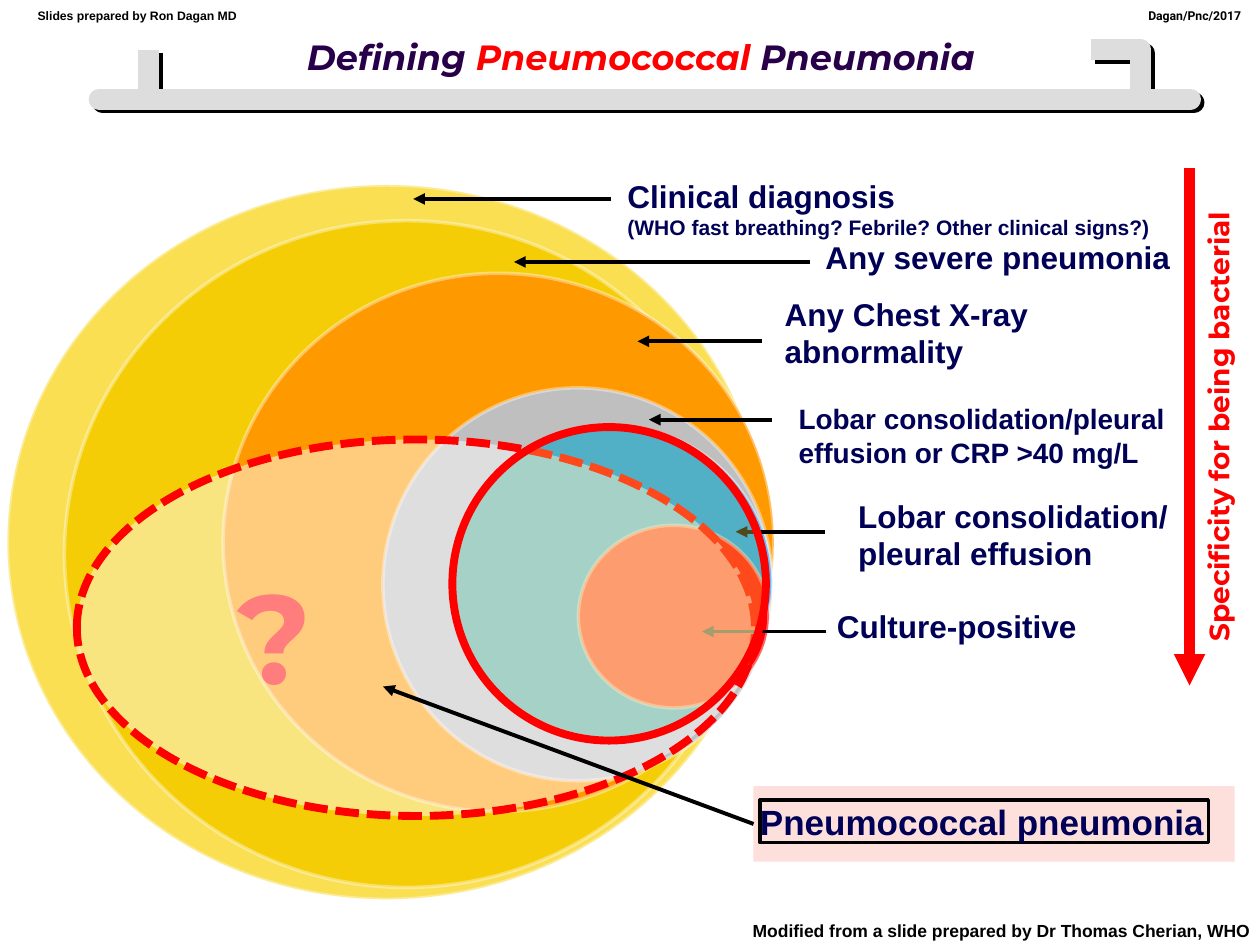
from lxml import etree
from pptx import Presentation
from pptx.dml.color import RGBColor
from pptx.enum.dml import MSO_LINE
from pptx.enum.shapes import MSO_CONNECTOR, MSO_SHAPE
from pptx.enum.text import MSO_ANCHOR, PP_ALIGN
from pptx.oxml.ns import qn
from pptx.util import Cm, Pt

OVAL, RECT = MSO_SHAPE.OVAL, MSO_SHAPE.RECTANGLE
STRAIGHT = MSO_CONNECTOR.STRAIGHT
DASH = MSO_LINE.SQUARE_DOT
LEFT, MID, RIGHT = PP_ALIGN.LEFT, PP_ALIGN.CENTER, PP_ALIGN.RIGHT
TOP, CENTER = MSO_ANCHOR.TOP, MSO_ANCHOR.MIDDLE

HEX = {
    "white": "FFFFFF", "black": "000000", "red": "FF0000", "navy": "000056",
    "plum": "280049", "lemon": "FBDF53", "gold": "F5CD06",
    "orange": "FF9900", "gray": "BFBFBF", "blue": "0099FF",
    "pink": "FDE0DB", "silver": "DDDDDD",
}


def rgb(name):
    return RGBColor.from_string(HEX[name])


def fade(fill, alpha):
    """Set the opacity, in percent, of a solid fill element."""
    etree.SubElement(fill[0], qn("a:alpha"), val=str(alpha * 1000))


def bezier(start, curves, steps=40):
    """Return points along a chain of cubic curves."""
    points = []
    for a, b, end in curves:
        for i in range(1, steps + 1):
            t = i / steps
            u = 1 - t
            points.append(tuple(
                u**3 * p + 3 * u * u * t * q + 3 * u * t * t * r + t**3 * s
                for p, q, r, s in zip(start, a, b, end)))
        start = end
    return points


class Canvas:
    """Holds the text style and the current slide."""
    font = "Arial"
    ink = "navy"

    def __init__(self, slide):
        self.shapes = slide.shapes

    def shape(self, kind, place, fill=None, alpha=None, line=None, width=2,
              line_alpha=None, dash=None):
        item = self.shapes.add_shape(kind, *map(Cm, place))
        item.shadow.inherit = False
        if fill:
            item.fill.solid()
            item.fill.fore_color.rgb = rgb(fill)
            if alpha:
                fade(item._element.spPr.find(qn("a:solidFill")), alpha)
        else:
            item.fill.background()
        if line:
            item.line.color.rgb = rgb(line)
            item.line.width = Pt(width)
            if line_alpha:
                outline = item._element.spPr.find(qn("a:ln"))
                fade(outline.find(qn("a:solidFill")), line_alpha)
            if dash:
                item.line.dash_style = dash
        else:
            item.line.fill.background()
        return item

    def put(self, item, lines, align=LEFT, anchor=TOP, inset=(0, 0),
            wrap=False, font=None, italic=False):
        """Fill a shape; each line is a list of (text, size, colour) runs."""
        frame = item.text_frame
        frame.word_wrap = wrap
        frame.vertical_anchor = anchor
        frame.margin_left = frame.margin_right = Cm(inset[0])
        frame.margin_top = frame.margin_bottom = Cm(inset[1])
        for i, runs in enumerate(lines):
            para = frame.add_paragraph() if i else frame.paragraphs[0]
            para.alignment = align
            for text, size, color in runs:
                run = para.add_run()
                run.text = text
                run.font.name = font or self.font
                run.font.size = Pt(size)
                run.font.bold = True
                run.font.italic = italic
                run.font.color.rgb = rgb(color)

    def text(self, place, runs, turn=0, **style):
        box = self.shapes.add_textbox(*map(Cm, place))
        box.rotation = turn
        self.put(box, [runs], **style)

    def label(self, place, rows, fill="white", line=None):
        box = self.shape(RECT, place, fill, line=line)
        self.put(box, [[(text, size, self.ink)] for text, size in rows])

    def arrow(self, start, end, color="black", width=2.25):
        item = self.shapes.add_connector(STRAIGHT, *map(Cm, start + end))
        item.line.color.rgb = rgb(color)
        item.line.width = Pt(width)
        props = item._element.spPr
        etree.SubElement(props.find(qn("a:ln")), qn("a:tailEnd"),
                         type="triangle")
        etree.SubElement(props, qn("a:effectLst"))
        return item

    def swoosh(self, start, curves, color, width):
        """Draw an open curve with a hard black shadow."""
        pen = self.shapes.build_freeform(*start, scale=Cm(1))
        pen.add_line_segments(bezier(start, curves), close=False)
        item = pen.convert_to_shape()
        item.fill.background()
        item.line.color.rgb = rgb(color)
        item.line.width = Pt(width)
        item.shadow.inherit = False
        effects = item._element.spPr.find(qn("a:effectLst"))
        shade = etree.SubElement(effects, qn("a:outerShdw"),
                                 dist=str(int(Pt(2.8))), dir="2700000")
        etree.SubElement(shade, qn("a:srgbClr"), val=HEX["black"])


CIRCLES = [
    ("lemon", (0.15, 3.73, 15.29, 14.4)),
    ("gold", (1.3, 4.45, 13.79, 13.44)),
    ("orange", (4.5, 5.51, 11.1, 10.85)),
    ("gray", (7.72, 7.82, 7.85, 7.92)),
    ("blue", (9.12, 8.59, 6.43, 6.3)),
    ("red", (11.66, 10.59, 3.84, 3.68)),
]

# place of the label, its rows, then the arrow's start, end and height
LABELS = [
    ((16.64, 4.8, 7.01, 0.76), [("Any severe pneumonia", 18)],
     (16.33, 10.36, 5.28)),
    ((15.82, 5.94, 6.15, 1.9), [("Any Chest X-ray", 18), ("abnormality", 18)],
     (15.37, 12.85, 6.88)),
    ((16.1, 8.1, 7.47, 1.37),
     [("Lobar consolidation/pleural", 16), ("effusion or CRP >40 mg/L", 16)],
     (15.57, 13.08, 8.46)),
    ((17.3, 10.01, 7.7, 1.93),
     [("Lobar consolidation/", 18), ("pleural effusion", 18)],
     (16.64, 14.83, 10.72)),
    ((16.87, 12.24, 4.88, 0.76), [("Culture-positive", 18)],
     (16.66, 14.15, 12.73)),
    ((12.65, 3.56, 10.67, 1.3),
     [("Clinical diagnosis", 18),
      ("(WHO fast breathing? Febrile? Other clinical signs?)", 12)],
     (12.32, 8.33, 4.01)),
]


def main():
    deck = Presentation()
    deck.slide_width, deck.slide_height = Cm(25.4), Cm(19.05)
    art = Canvas(deck.slides.add_slide(deck.slide_layouts[6]))
    pad = {"inset": (0.25, 0.13), "wrap": True}

    art.swoosh((3.45, 1.4), [
        ((1.85, 1.75), (0.23, 2.11), (3.33, 2.24)),
        ((6.45, 2.36), (18.97, 2.31), (22.07, 2.13)),
        ((25.2, 1.98), (23.67, 1.6), (22.12, 1.24)),
    ], "silver", 12)
    art.text((22.07, 0.03, 3.2, 0.56), [("Dagan/Pnc/2017", 7, "black")],
             align=RIGHT, font="Roboto", **pad)
    art.text((0.51, 0.03, 8.38, 0.56),
             [("Slides prepared by Ron Dagan MD", 7, "black")], **pad)
    art.text((1.3, 0.53, 23.24, 1.22),
             [("Defining ", 20, "plum"), ("Pneumococcal ", 20, "red"),
              ("Pneumonia", 20, "plum")], align=MID, anchor=CENTER,
             inset=(0.2, 0.2), wrap=True, font="Montserrat", italic=True)

    for fill, place in CIRCLES:
        art.shape(OVAL, place, fill, line="white", line_alpha=39)
    for place, rows, (start, end, y) in LABELS:
        art.label(place, rows)
        art.arrow((start, y), (end, y))
    art.text((4.27, 11.13, 2.54, 3.3), [("?", 72, "red")], align=MID,
             font="Montserrat", **pad)

    panel = art.shape(RECT, (15.19, 15.85, 9.7, 1.52), "pink")
    art.shape(OVAL, (1.55, 8.86, 13.67, 7.59), "white", 49,
              line="red", width=4.5, dash=DASH)
    link = art.arrow((15.19, 16.61), (7.72, 13.84))
    link.begin_connect(panel, 1)
    art.label((15.32, 16.13, 9.04, 0.86), [("Pneumococcal pneumonia", 20)],
              fill=None, line="black")

    art.arrow((23.98, 3.38), (23.98, 13.82), "red", 6)
    art.text((18.54, 8.13, 12.04, 0.94),
             [("Specificity for being bacterial", 16, "red")], turn=270,
             align=MID, font="Montserrat", **pad)
    art.shape(OVAL, (9.12, 8.61, 6.32, 6.32), "lemon", 33,
              line="red", width=4.5)
    art.text((15.06, 18.54, 10.13, 0.43),
             [("Modified from a slide prepared by Dr Thomas Cherian, WHO",
               10, "black")], align=RIGHT)
    deck.save("out.pptx")


if __name__ == "__main__":
    main()
